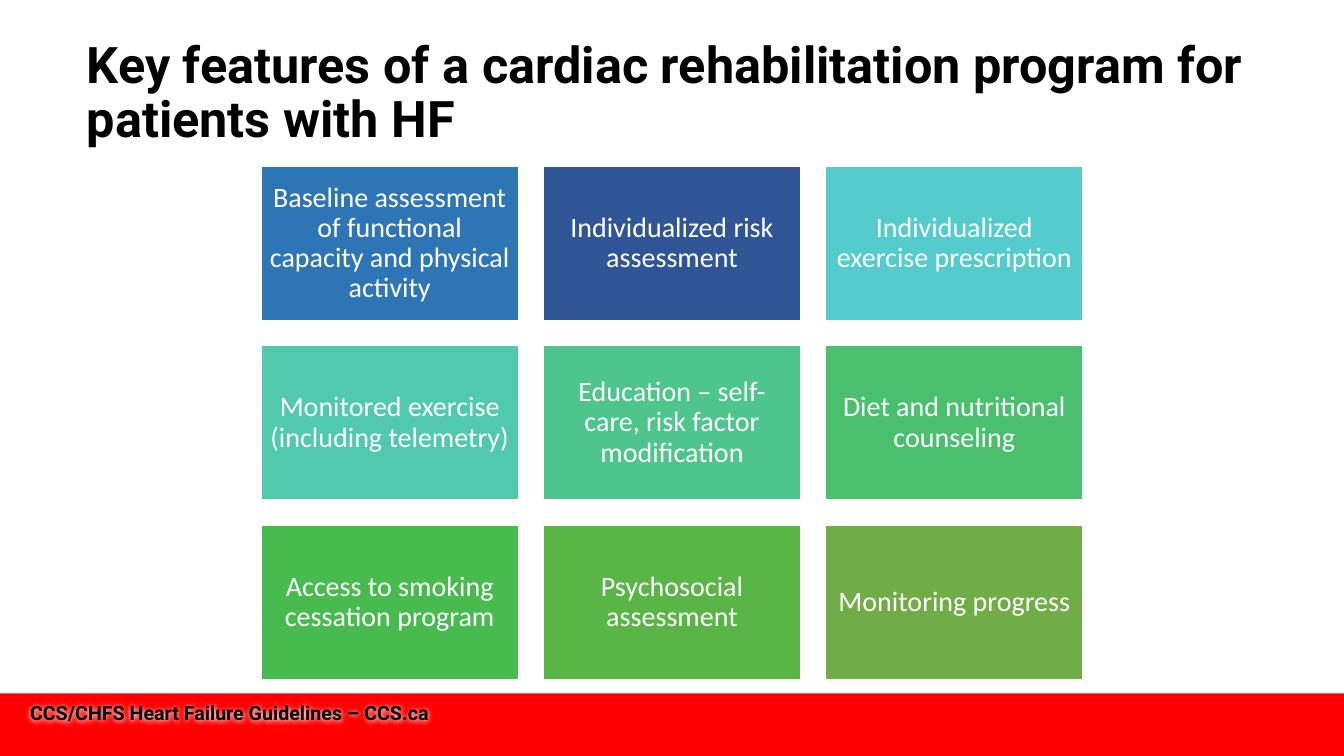
from dataclasses import dataclass

from lxml.etree import SubElement
from pptx import Presentation
from pptx.dml.color import RGBColor
from pptx.enum.shapes import MSO_SHAPE
from pptx.enum.text import MSO_ANCHOR, MSO_AUTO_SIZE, PP_ALIGN
from pptx.oxml.ns import qn
from pptx.shapes.autoshape import Shape
from pptx.slide import Slide
from pptx.util import Inches, Pt


@dataclass(frozen=True)
class Theme:
    head: str = "Roboto"
    body: str = "Calibri"
    dark: str = "000000"
    light: str = "FFFFFF"
    band: str = "FF0000"
    title: int = 36
    tile: int = 20
    foot: int = 14


@dataclass(frozen=True)
class Tile:
    text: str
    fill: str


THEME = Theme()
COLS = 3
LEFT, TOP = 2.59, 1.65
WIDTH, HEIGHT = 2.55, 1.53
STEP_X, STEP_Y = 2.8, 1.78

TILES = [
    Tile("Baseline assessment of functional capacity and physical activity", "2E75B6"),
    Tile("Individualized risk assessment", "2F5597"),
    Tile("Individualized exercise prescription", "54CCCD"),
    Tile("Monitored exercise (including telemetry)", "51C9AD"),
    Tile("Education – self-care, risk factor modification", "4DC58D"),
    Tile("Diet and nutritional counseling", "4AC06E"),
    Tile("Access to smoking cessation program", "48BB4F"),
    Tile("Psychosocial assessment", "59B546"),
    Tile("Monitoring progress", "70AD47"),
]


def write(shape: Shape, text: str, *, size: int, font: str, color: str,
          bold: bool = False, align: PP_ALIGN = PP_ALIGN.LEFT,
          anchor: MSO_ANCHOR = MSO_ANCHOR.MIDDLE, space: float = 0.9,
          inset: float | None = None) -> None:
    frame = shape.text_frame
    frame.word_wrap = True
    frame.auto_size = MSO_AUTO_SIZE.NONE
    frame.vertical_anchor = anchor
    if inset is not None:
        frame.margin_left = frame.margin_right = Inches(inset)
        frame.margin_top = frame.margin_bottom = Inches(inset)
    para = frame.paragraphs[0]
    para.alignment = align
    para.line_spacing = space
    run = para.add_run()
    run.text = text
    run.font.size = Pt(size)
    run.font.name = font
    run.font.bold = bold
    run.font.color.rgb = RGBColor.from_string(color)


def add_box(slide: Slide, x: float, y: float, w: float, h: float,
            fill: str, line: str | None = None) -> Shape:
    box = slide.shapes.add_shape(
        MSO_SHAPE.RECTANGLE, Inches(x), Inches(y), Inches(w), Inches(h))
    box.shadow.inherit = False
    box.fill.solid()
    box.fill.fore_color.rgb = RGBColor.from_string(fill)
    if line:
        box.line.color.rgb = RGBColor.from_string(line)
        box.line.width = Pt(1)
    else:
        box.line.fill.background()
    return box


def add_halo(shape: Shape, color: str) -> None:
    """Put a soft light shadow behind the text of an unfilled box."""
    effects = SubElement(shape.element.spPr, qn("a:effectLst"))
    shade = SubElement(effects, qn("a:outerShdw"), blurRad="50800", dist="0")
    SubElement(shade, qn("a:srgbClr"), val=color)


def add_foot(slide: Slide) -> None:
    add_box(slide, 0, 6.88, 13.33, 0.62, THEME.band)
    foot = slide.shapes.add_textbox(
        Inches(0.2), Inches(6.9), Inches(12.37), Inches(0.34))
    write(foot, "CCS/CHFS Heart Failure Guidelines – CCS.ca", size=THEME.foot,
          font=THEME.head, color=THEME.dark, bold=True,
          anchor=MSO_ANCHOR.TOP, space=1.0)
    add_halo(foot, THEME.light)


def add_title(slide: Slide) -> None:
    title = slide.shapes.title
    title.left, title.top = Inches(0.76), Inches(0.4)
    title.width, title.height = Inches(11.81), Inches(1.07)
    write(title, "Key features of a cardiac rehabilitation program for patients with HF",
          size=THEME.title, font=THEME.head, color=THEME.dark, bold=True)


def add_tiles(slide: Slide) -> None:
    for i, tile in enumerate(TILES):
        row, col = divmod(i, COLS)
        box = add_box(slide, LEFT + col * STEP_X, TOP + row * STEP_Y,
                      WIDTH, HEIGHT, tile.fill, THEME.light)
        write(box, tile.text, size=THEME.tile, font=THEME.body,
              color=THEME.light, align=PP_ALIGN.CENTER, inset=0.08)


def main() -> None:
    deck = Presentation()
    deck.slide_width, deck.slide_height = Inches(13.33), Inches(7.5)
    slide = deck.slides.add_slide(deck.slide_layouts.get_by_name("Title Only"))
    add_foot(slide)
    add_title(slide)
    add_tiles(slide)
    deck.save("out.pptx")


if __name__ == "__main__":
    main()
